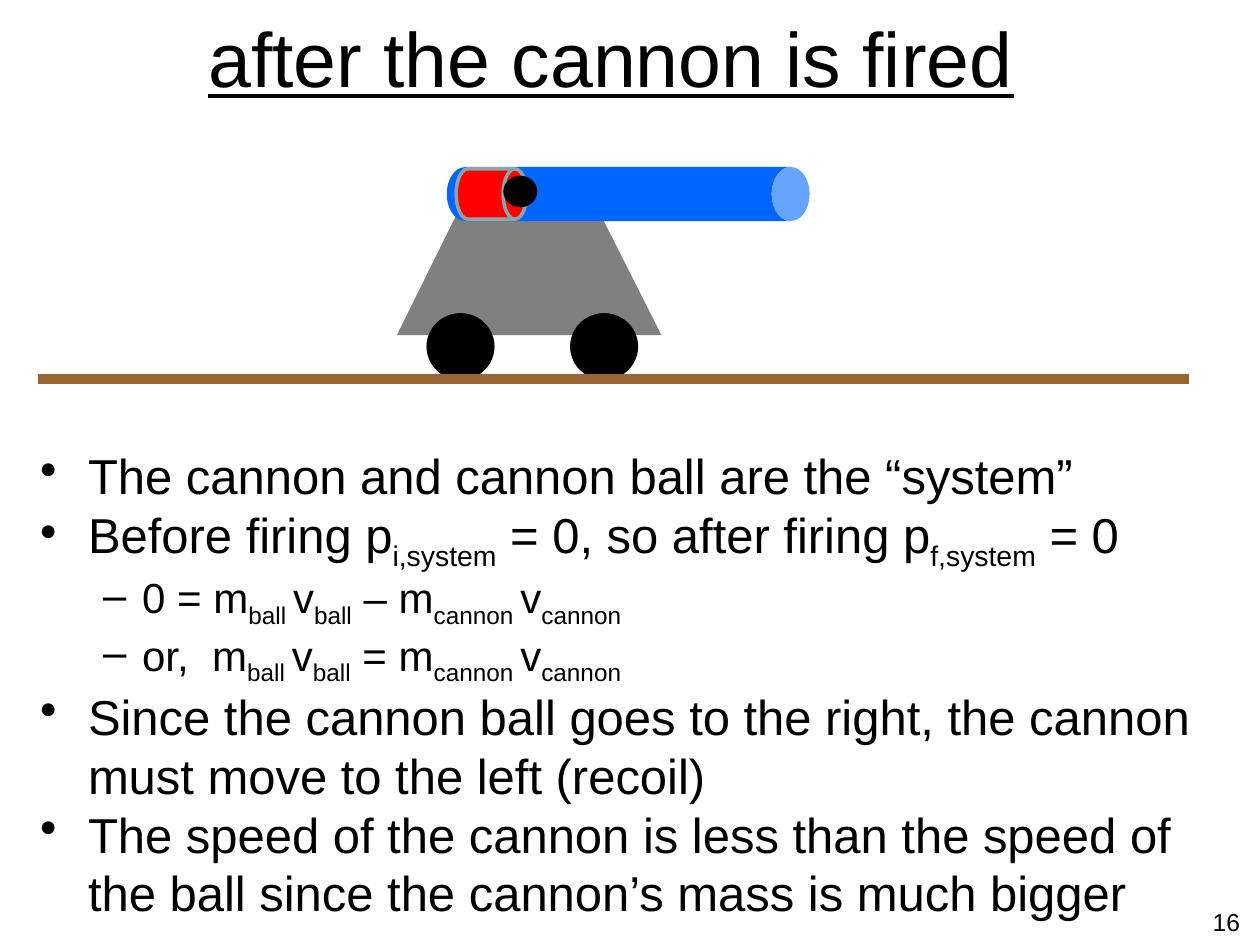
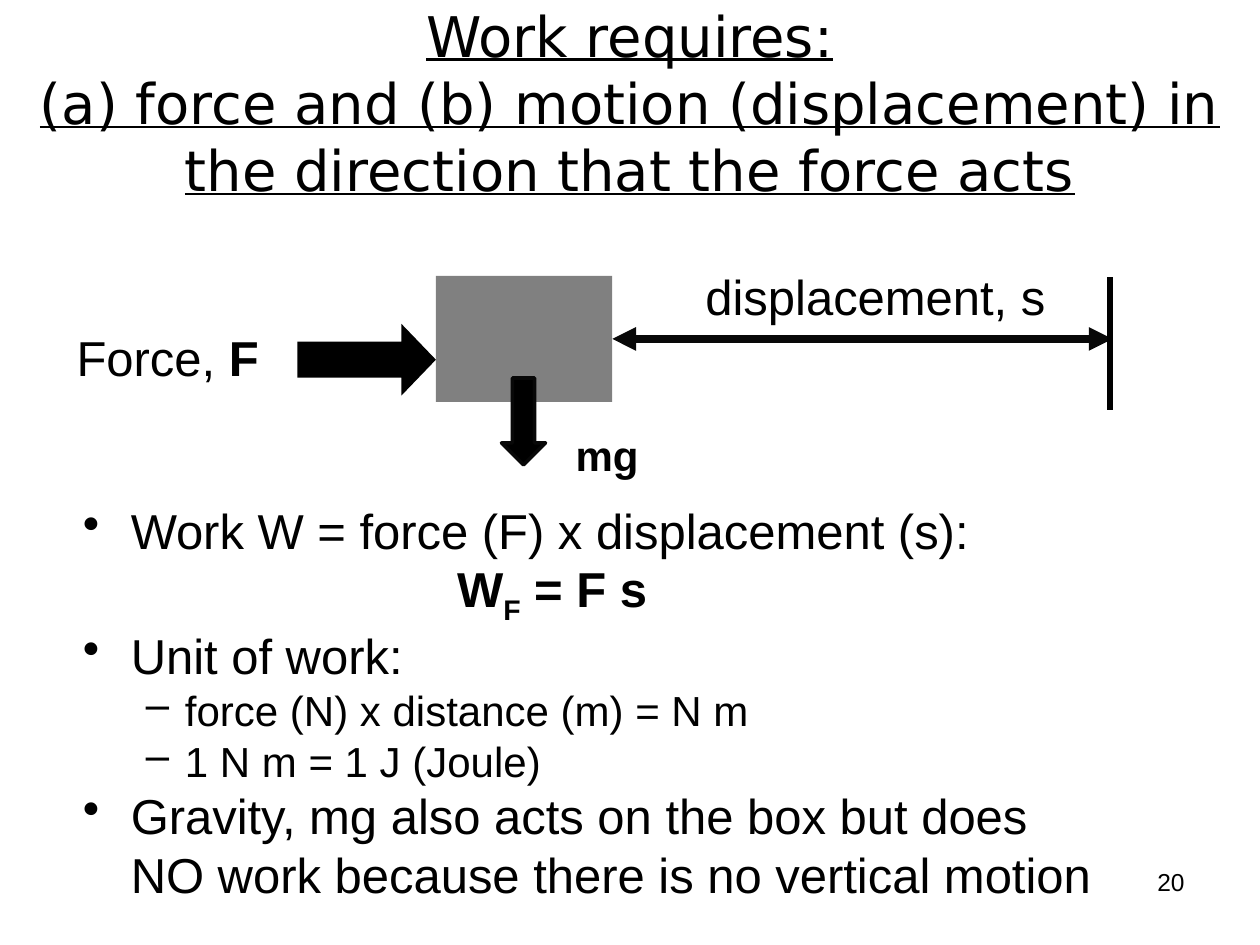
import pptx
import pptx.util
import pptx.dml.color
import pptx.enum.shapes
import pptx.enum.text
import pptx.oxml
import pptx.oxml.ns
import lxml.etree

PX = 9144  # one px is a hundredth of an inch
BLACK = pptx.dml.color.RGBColor(0x00, 0x00, 0x00)
SOFT_BLACK = pptx.dml.color.RGBColor(0x08, 0x08, 0x08)
GRAY = pptx.dml.color.RGBColor(0x80, 0x80, 0x80)
BLUE = pptx.dml.color.RGBColor(0x00, 0x66, 0xFF)
RED = pptx.dml.color.RGBColor(0xFF, 0x00, 0x00)
RIM = pptx.dml.color.RGBColor(0x8A, 0xA6, 0xA8)
BROWN = pptx.dml.color.RGBColor(0x99, 0x66, 0x33)

SHAPE = pptx.enum.shapes.MSO_SHAPE
ALIGN = pptx.enum.text.PP_ALIGN
MIDDLE = pptx.enum.text.MSO_ANCHOR.MIDDLE
qn = pptx.oxml.ns.qn

# style: font, size, underline, alignment, left margin, first line, bullet
STYLES = {
    "title": ("Arial", 44, True, ALIGN.CENTER, 0, 0, None),
    "long title": ("DejaVu Sans", 32, True, ALIGN.CENTER, 0, 0, None),
    "point": ("Arial", 28, False, ALIGN.LEFT, 38, -38, "•"),
    "detail": ("Arial", 24, False, ALIGN.LEFT, 81, -31, "–"),
    "formula": ("Arial", 28, False, ALIGN.LEFT, 297, 0, None),
    "label": ("Arial", 28, False, ALIGN.LEFT, 0, 0, None),
    "small label": ("Arial", 24, False, ALIGN.LEFT, 0, 0, None),
    "number": ("Arial", 14, False, ALIGN.RIGHT, 0, 0, None),
}


def add_text(page, place, *lines):
    """Add a text box of (style, text) lines; _..._ marks a subscript."""
    box = page.shapes.add_textbox(*[n * PX for n in place])
    frame = box.text_frame
    frame.word_wrap = True
    for index, (style, text) in enumerate(lines):
        font, size, underline, align, margin, first, bullet = STYLES[style]
        para = frame.add_paragraph() if index else frame.paragraphs[0]
        para.alignment = align
        props = para._p.get_or_add_pPr()
        props.set("marL", str(margin * PX))
        props.set("indent", str(first * PX))
        if bullet:
            lxml.etree.SubElement(props, qn("a:buChar")).set("char", bullet)
        if "_" not in text:
            para.text = text
        else:
            for part, piece in enumerate(text.split("_")):
                if piece:
                    span = para.add_run()
                    span.text = piece
                    if part % 2:
                        span._r.get_or_add_rPr().set("baseline", "-25000")
        for span in para.runs:
            span.font.name = font
            span.font.size = pptx.util.Pt(size)
            span.font.underline = underline
            span.font.bold = style in ("formula", "small label")
            span.font.color.rgb = BLACK
    return frame


def add_figure(page, kind, place, fill, line=None, weight=0.75, turn=0):
    figure = page.shapes.add_shape(kind, *[n * PX for n in place])
    figure.shadow.inherit = False
    figure.rotation = turn
    figure.fill.solid()
    figure.fill.fore_color.rgb = fill
    if line is None:
        figure.line.fill.background()
    else:
        figure.line.color.rgb = line
        figure.line.width = pptx.util.Pt(weight)
    return figure


deck = pptx.Presentation()
deck.slide_width = 1000 * PX
deck.slide_height = 750 * PX
cannon_page = deck.slides.add_slide(deck.slide_layouts[6])
work_page = deck.slides.add_slide(deck.slide_layouts[6])

# Cannon slide: text
title = add_text(cannon_page, (35, 19, 900, 52), ("title", "after the cannon is fired"))
title.vertical_anchor = MIDDLE
add_text(
    cannon_page, (22, 349, 969, 372),
    ("point", "The cannon and cannon ball are the “system”"),
    ("point", "Before firing p_i,system_ = 0, so after firing p_f,system_ = 0"),
    ("detail", "0 = m_ball _v_ball_ – m_cannon _v_cannon_"),
    ("detail", "or,  m_ball _v_ball_ = m_cannon _v_cannon_"),
    ("point", "Since the cannon ball goes to the right, the cannon must move to the left (recoil)"),
    ("point", "The speed of the cannon is less than the speed of the ball "
              "since the cannon’s mass is much bigger"),
)
add_text(cannon_page, (944, 715, 50, 35), ("number", "16"))

# Cannon slide: carriage, wheels, barrel, charge and ball
outline = cannon_page.shapes.build_freeform(525, 266, scale=PX)
outline.add_line_segments([(472, 161), (367, 161), (315, 266)], close=True)
carriage = outline.convert_to_shape()
carriage.shadow.inherit = False
carriage.fill.solid()
carriage.fill.fore_color.rgb = GRAY
carriage.line.fill.background()
for wheel_left in (339, 453):
    add_figure(cannon_page, SHAPE.OVAL, (wheel_left, 249, 53, 52), BLACK, BLACK)
barrel = add_figure(cannon_page, SHAPE.CAN, (477, 10, 43, 288), BLUE, turn=90)
barrel.adjustments[0] = 0.7
add_figure(cannon_page, SHAPE.FLOWCHART_MAGNETIC_DISK, (370, 126, 40, 56), RED, RIM, 2, 90)
add_figure(cannon_page, SHAPE.OVAL, (400, 140, 26, 24), BLACK, BLACK)

# Work slide: text
title = add_text(
    work_page, (0, 7, 1000, 148),
    ("long title", "Work requires:\v(a) force and (b) motion (displacement) "
                   "in the direction that the force acts"),
)
title.vertical_anchor = MIDDLE
add_text(
    work_page, (56, 392, 833, 346),
    ("point", "Work W = force (F) x displacement (s):"),
    ("formula", "W_F_ = F s"),
    ("point", "Unit of work:"),
    ("detail", "force (N) x distance (m) = N m"),
    ("detail", "1 N m = 1 J (Joule)"),
    ("point", "Gravity, mg also acts on the box but does NO work "
              "because there is no vertical motion"),
)
add_text(work_page, (717, 683, 233, 52), ("number", "20"))

# Work slide: box, its forces and their labels
add_figure(work_page, SHAPE.RECTANGLE, (346, 219, 140, 100), GRAY)
push = add_figure(work_page, SHAPE.RIGHT_ARROW, (236, 257, 110, 57), BLACK)
push.adjustments[1] = 0.48
add_figure(work_page, SHAPE.DOWN_ARROW, (398, 300, 35, 69), BLACK, SOFT_BLACK, 2)
force = add_text(work_page, (51, 255, 180, 57), ("label", "Force, __F"))
force.paragraphs[0].runs[-1].font.bold = True
add_text(work_page, (550, 207, 300, 57), ("label", "displacement, s"))
add_text(work_page, (447, 336, 80, 50), ("small label", "mg"))

# Ground, displacement arrow and end mark
for page, ends, color, weight, arrows in (
    (cannon_page, (30, 301, 944, 301), BROWN, 6, False),
    (work_page, (486, 269, 883, 269), SOFT_BLACK, 4.5, True),
    (work_page, (881, 220, 881, 325), BLACK, 3, False),
):
    line = page.shapes.add_connector(
        pptx.enum.shapes.MSO_CONNECTOR.STRAIGHT, *[n * PX for n in ends])
    line.line.color.rgb = color
    line.line.width = pptx.util.Pt(weight)
    if arrows:
        for end in ("a:headEnd", "a:tailEnd"):
            stroke = line.line._get_or_add_ln()
            lxml.etree.SubElement(stroke, qn(end)).set("type", "triangle")
    lxml.etree.SubElement(line._element.spPr, qn("a:effectLst"))

deck.save("out.pptx")
